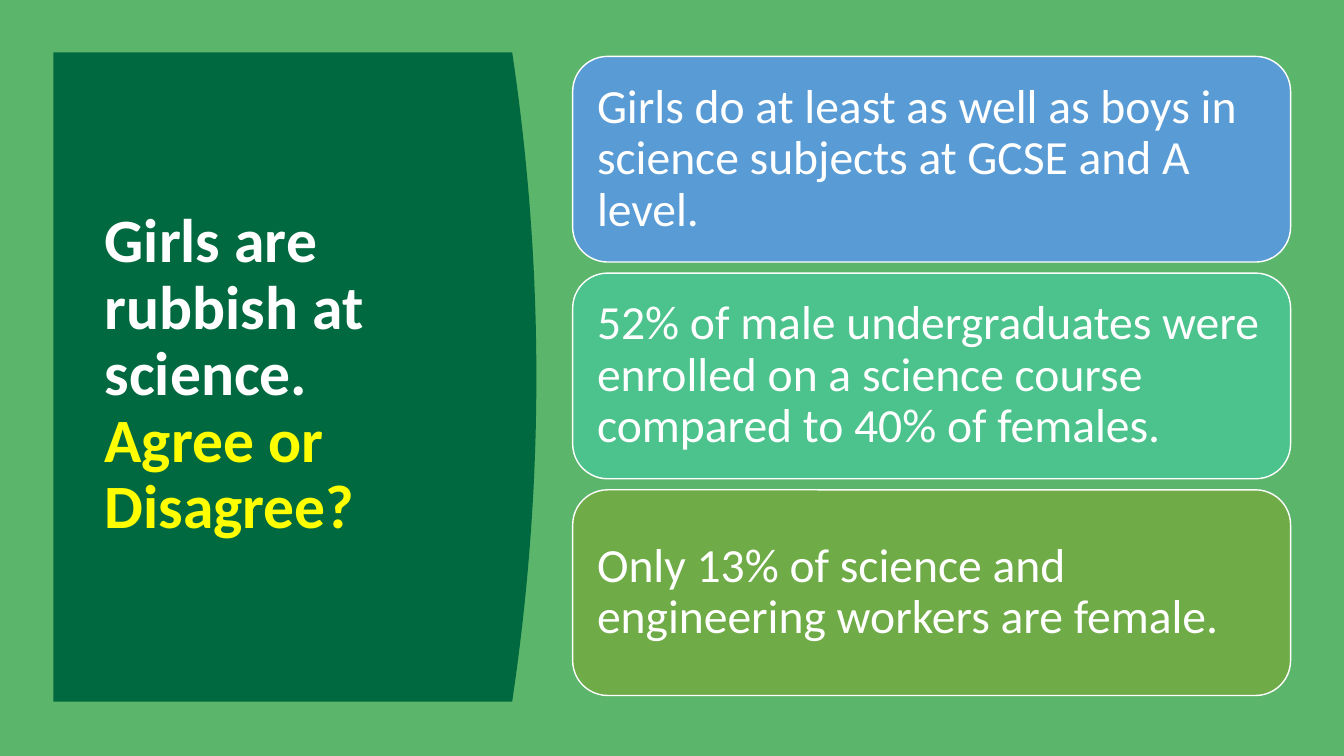
"""Build the "Girls are rubbish at science" discussion slide."""
from dataclasses import dataclass

from pptx import Presentation
from pptx import util as u
from pptx.dml.color import RGBColor
from pptx.enum import shapes, text
from pptx.shapes.autoshape import Shape
from pptx.slide import Slide
from pptx.text.text import TextFrame


@dataclass(frozen=True)
class Theme:
    """Colours, font and type sizes of the slide."""
    background: str = "5BB56A"
    panel: str = "01693F"
    white: str = "FFFFFF"
    accent: str = "FFFF00"
    blue: str = "599BD5"
    mint: str = "4CC38C"
    olive: str = "6FAB46"
    font: str = "Calibri"
    title_size: int = 44
    card_size: int = 34


@dataclass(frozen=True)
class Card:
    """A rounded statement card."""
    words: str
    fill: str


THEME = Theme()
CARDS = (
    Card("Girls do at least as well as boys in science subjects at GCSE and A level.", THEME.blue),
    Card("52% of male undergraduates were enrolled on a science course "
         "compared to 40% of females.", THEME.mint),
    Card("Only 13% of science and engineering workers are female.", THEME.olive),
)
CARD_LEFT, CARD_TOP, CARD_WIDTH, CARD_HEIGHT = 5.68, 0.56, 7.12, 2.04
CARD_PITCH = 2.15
PANEL_LEFT, PANEL_RIGHT, PANEL_TOP, PANEL_BOTTOM = 0.53, 5.08, 0.52, 6.96
PANEL_BULGE, CURVE_STEPS = 0.24, 40


def set_fill(sp: Shape, colour: str) -> None:
    """Give a shape a flat fill and no shadow."""
    sp.shadow.inherit = False
    sp.fill.solid()
    sp.fill.fore_color.rgb = RGBColor.from_string(colour)


def write(tf: TextFrame, parts: list[tuple[str, str]], size: int, bold: bool,
          side: float, edge: float) -> None:
    """Write coloured runs, one after each line break, in a centred frame."""
    tf.word_wrap = True
    tf.vertical_anchor = text.MSO_ANCHOR.MIDDLE
    tf.margin_left = tf.margin_right = u.Inches(side)
    tf.margin_top = tf.margin_bottom = u.Inches(edge)
    p = tf.paragraphs[0]
    p.alignment = text.PP_ALIGN.LEFT
    p.line_spacing = 0.9
    for i, (words, colour) in enumerate(parts):
        if i:
            p.add_line_break()
        r = p.add_run()
        r.text = words
        r.font.name = THEME.font
        r.font.size = u.Pt(size)
        r.font.bold = bold
        r.font.color.rgb = RGBColor.from_string(colour)


def draw_panel(slide: Slide) -> None:
    """Draw the dark panel with its parabolic right edge."""
    curve = []
    for i in range(CURVE_STEPS + 1):
        t = i / CURVE_STEPS
        x = PANEL_RIGHT + PANEL_BULGE * 4 * t * (1 - t)
        y = PANEL_TOP + (PANEL_BOTTOM - PANEL_TOP) * t
        curve.append((u.Inches(x), u.Inches(y)))
    fb = slide.shapes.build_freeform(u.Inches(PANEL_LEFT), u.Inches(PANEL_TOP))
    fb.add_line_segments(curve + [(u.Inches(PANEL_LEFT), u.Inches(PANEL_BOTTOM))], close=True)
    sp = fb.convert_to_shape()
    set_fill(sp, THEME.panel)
    sp.line.fill.background()


def draw_title(slide: Slide) -> None:
    """Place the statement and its question on the panel."""
    sp = slide.shapes.add_textbox(u.Inches(0.94), u.Inches(1.11), u.Inches(3.74), u.Inches(5.24))
    write(sp.text_frame, [("Girls are rubbish at science.", THEME.white),
                          ("Agree or Disagree?", THEME.accent)],
          THEME.title_size, True, 0.1, 0.05)


def draw_card(slide: Slide, card: Card, row: int) -> None:
    """Draw one statement card in its row."""
    sp = slide.shapes.add_shape(
        shapes.MSO_SHAPE.ROUNDED_RECTANGLE, u.Inches(CARD_LEFT),
        u.Inches(CARD_TOP + row * CARD_PITCH), u.Inches(CARD_WIDTH), u.Inches(CARD_HEIGHT))
    sp.adjustments[0] = 0.17
    set_fill(sp, card.fill)
    sp.line.color.rgb = RGBColor.from_string(THEME.white)
    sp.line.width = u.Pt(1)
    write(sp.text_frame, [(card.words, THEME.white)], THEME.card_size, False, 0.14, 0.14)


def main() -> None:
    """Build and save the slide."""
    prs = Presentation()
    prs.slide_width, prs.slide_height = u.Inches(13.33), u.Inches(7.5)
    slide = prs.slides.add_slide(prs.slide_layouts[6])
    slide.background.fill.solid()
    slide.background.fill.fore_color.rgb = RGBColor.from_string(THEME.background)
    draw_panel(slide)
    draw_title(slide)
    for row, card in enumerate(CARDS):
        draw_card(slide, card, row)
    prs.save("out.pptx")


if __name__ == "__main__":
    main()
